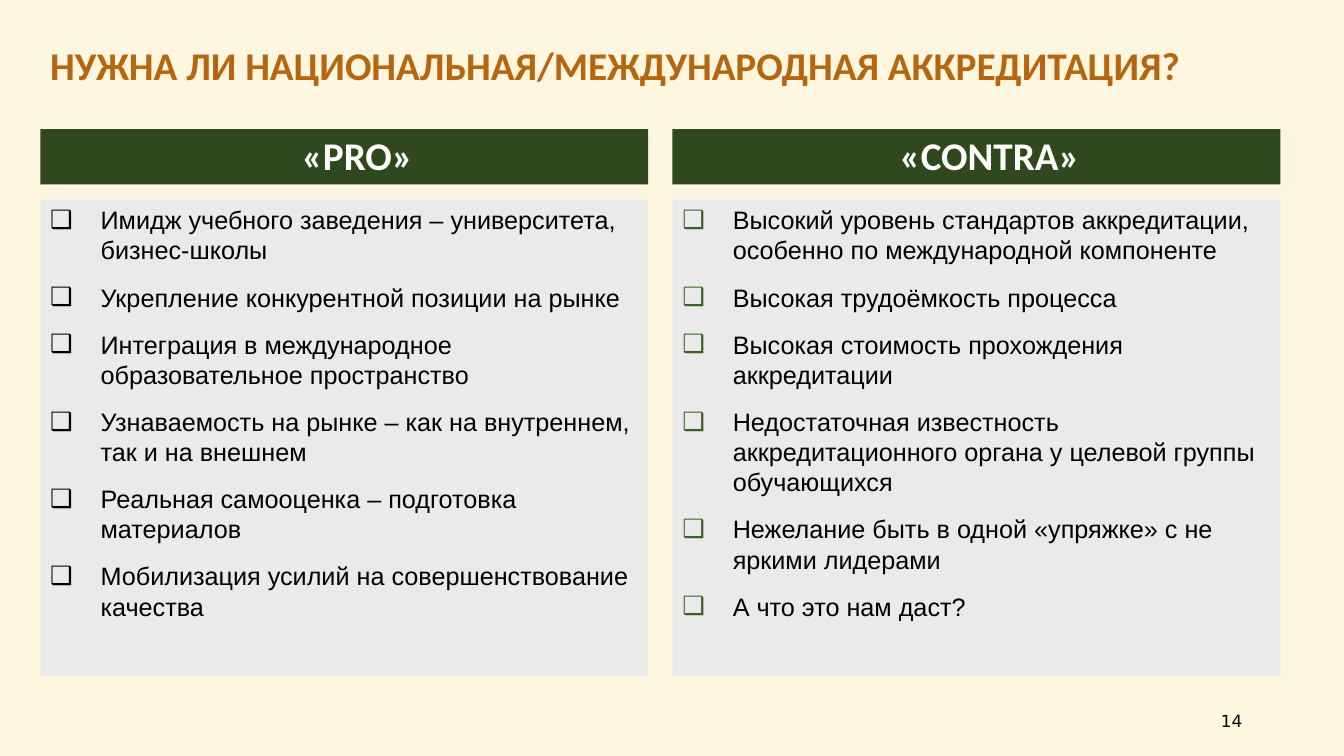
from pptx import Presentation
from pptx.dml.color import RGBColor
from pptx.enum.shapes import MSO_SHAPE
from pptx.enum.text import MSO_ANCHOR, PP_ALIGN
from pptx.oxml.ns import qn
from pptx.util import Inches, Pt
from lxml import etree

RECT = MSO_SHAPE.RECTANGLE
TOP, MIDDLE = MSO_ANCHOR.TOP, MSO_ANCHOR.MIDDLE
LEFT, CENTER, RIGHT = PP_ALIGN.LEFT, PP_ALIGN.CENTER, PP_ALIGN.RIGHT

TITLE = "НУЖНА ЛИ НАЦИОНАЛЬНАЯ/МЕЖДУНАРОДНАЯ АККРЕДИТАЦИЯ?"
PAGE = "14"
COLUMNS = [
    ("«PRO»", "000000", [
        "Имидж учебного заведения – университета, бизнес-школы",
        "Укрепление конкурентной позиции на рынке",
        "Интеграция в международное образовательное пространство",
        "Узнаваемость на рынке – как на внутреннем, так и на внешнем",
        "Реальная самооценка – подготовка материалов",
        "Мобилизация усилий на совершенствование качества",
    ]),
    ("«CONTRA»", "3E6027", [
        "Высокий уровень стандартов аккредитации, особенно по международной компоненте",
        "Высокая трудоёмкость процесса",
        "Высокая стоимость прохождения аккредитации",
        "Недостаточная известность аккредитационного органа у целевой группы обучающихся",
        "Нежелание быть в одной «упряжке» с не яркими лидерами",
        "А что это нам даст?",
    ]),
]
MARGIN, COL_W, GAP = 0.4, 6.03, 0.24


def rgb(color):
    return RGBColor.from_string(color)


def add_bullet(p, color):
    pPr = p._p.get_or_add_pPr()
    pPr.set("marL", str(Inches(0.5)))
    pPr.set("indent", str(-Inches(0.5)))
    clr = etree.SubElement(pPr, qn("a:buClr"))
    etree.SubElement(clr, qn("a:srgbClr"), val=color)
    etree.SubElement(pPr, qn("a:buFont"), typeface="Arial")
    etree.SubElement(pPr, qn("a:buChar"), char="❑")


def write(sp, lines, size=18, font="Arial", color="000000", bold=False, align=LEFT,
          anchor=TOP, spacing=None, gap=0, bullet=None, inset=0.1):
    tf = sp.text_frame
    tf.word_wrap = True
    tf.vertical_anchor = anchor
    tf.margin_left = Inches(inset)
    for i, line in enumerate(lines):
        p = tf.add_paragraph() if i else tf.paragraphs[0]
        p.alignment = align
        p.space_before = Pt(gap if i else 0)
        p.space_after = Pt(gap)
        if spacing:
            p.line_spacing = spacing
        if bullet:
            add_bullet(p, bullet)
        r = p.add_run()
        r.text = line
        r.font.size = Pt(size)
        r.font.name = font
        r.font.bold = bold
        r.font.color.rgb = rgb(color)


def add_text(s, box, text, **fmt):
    write(s.shapes.add_textbox(*map(Inches, box)), [text], **fmt)


def add_panel(s, box, fill, lines, **fmt):
    sp = s.shapes.add_shape(RECT, *map(Inches, box))
    sp.shadow.inherit = False
    sp.fill.solid()
    sp.fill.fore_color.rgb = rgb(fill)
    sp.line.fill.background()
    write(sp, lines, **fmt)


prs = Presentation()
prs.slide_width, prs.slide_height = Inches(13.33), Inches(7.5)
s = prs.slides.add_slide(prs.slide_layouts[6])
s.background.fill.solid()
s.background.fill.fore_color.rgb = rgb("FEF6DE")

add_text(s, (MARGIN, 0.13, 12.9, 1.01), TITLE, size=28, font="Calibri",
         color="B6660E", bold=True, anchor=MIDDLE, spacing=1.05)
for i, (heading, bullet, points) in enumerate(COLUMNS):
    x = MARGIN + i * (COL_W + GAP)
    add_panel(s, (x, 1.28, COL_W, 0.55), "2F481D", [heading], size=28, font="Calibri",
              color="FFFFFF", bold=True, align=CENTER, anchor=MIDDLE, spacing=0.95,
              inset=0.36)
    add_panel(s, (x, 1.98, COL_W, 4.73), "EAEAEA", points, gap=6, bullet=bullet)
add_text(s, (9.42, 6.95, 3, 0.4), PAGE, size=12, font="DejaVu Sans",
         align=RIGHT, anchor=MIDDLE)

prs.save("out.pptx")
